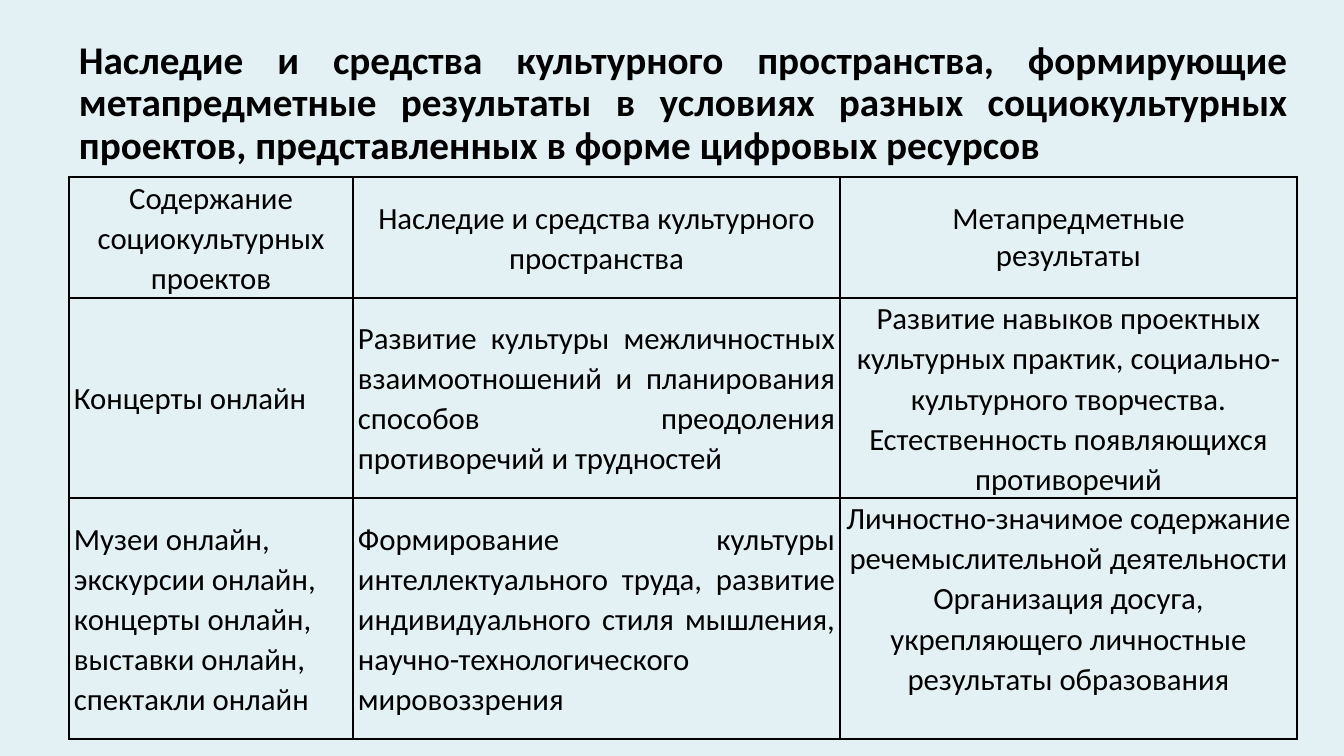
from lxml import etree
from pptx import Presentation
from pptx.dml.color import RGBColor
from pptx.enum.text import MSO_ANCHOR, PP_ALIGN
from pptx.oxml.ns import qn
from pptx.util import Pt

PX = 914400 / 100.8
BACKGROUND = RGBColor(0xE4, 0xF1, 0xF4)
BLACK = RGBColor(0x00, 0x00, 0x00)
CENTER, JUSTIFY = PP_ALIGN.CENTER, PP_ALIGN.JUSTIFY
MIDDLE, TOP = MSO_ANCHOR.MIDDLE, MSO_ANCHOR.TOP

TITLE = ("Наследие и средства культурного пространства, формирующие "
         "метапредметные результаты в условиях разных социокультурных "
         "проектов, представленных в форме цифровых ресурсов")
COL_WIDTHS = [284, 487, 457]
ROW_HEIGHTS = [121, 200, 241]
ROWS = [
    ["Содержание социокультурных проектов",
     "Наследие и средства культурного пространства",
     "Метапредметные\nрезультаты"],
    ["Концерты онлайн",
     "Развитие культуры межличностных взаимоотношений и планирования "
     "способов преодоления противоречий и трудностей",
     "Развитие навыков проектных культурных практик, "
     "социально-культурного творчества. "
     "Естественность появляющихся противоречий"],
    ["Музеи онлайн,\nэкскурсии онлайн,\nконцерты онлайн,\n"
     "выставки онлайн,\nспектакли онлайн",
     "Формирование культуры интеллектуального труда, развитие "
     "индивидуального стиля мышления, научно-технологического мировоззрения",
     "Личностно-значимое содержание речемыслительной деятельности\n"
     "Организация досуга, укрепляющего личностные результаты образования"],
]


def px(n):
    return round(n * PX)


def write(tf, text, size, bold, align, spacing):
    tf.text = text
    for p in tf.paragraphs:
        p.alignment = align
        p.line_spacing = spacing
        font = p.runs[0].font
        font.name = "Calibri"
        font.size = Pt(size)
        font.bold = bold
        font.color.rgb = BLACK


prs = Presentation()
prs.slide_width, prs.slide_height = px(1344), px(756)
slide = prs.slides.add_slide(prs.slide_layouts[6])
slide.background.fill.solid()
slide.background.fill.fore_color.rgb = BACKGROUND

title = slide.shapes.add_textbox(px(69), px(31), px(1228), px(146))
tf = title.text_frame
tf.word_wrap = True
tf.vertical_anchor = MIDDLE
write(tf, TITLE, 28, True, JUSTIFY, 0.9)

table = slide.shapes.add_table(
    len(ROWS), len(COL_WIDTHS), px(69), px(177),
    px(sum(COL_WIDTHS)), px(sum(ROW_HEIGHTS))).table
table.first_row = table.horz_banding = False
for column, width in zip(table.columns, COL_WIDTHS):
    column.width = px(width)
for row, height in zip(table.rows, ROW_HEIGHTS):
    row.height = px(height)

for i, texts in enumerate(ROWS):
    for j, text in enumerate(texts):
        cell = table.cell(i, j)
        last = i == 2 and j == 2
        cell.margin_left = cell.margin_right = px(2 if last else 5)
        cell.margin_top = cell.margin_bottom = 0
        cell.vertical_anchor = TOP if last else MIDDLE
        align = CENTER if i == 0 or j == 2 else JUSTIFY
        spacing = 1.0 if i == 0 and j == 2 else 1.07
        write(cell.text_frame, text, 22, False, align, spacing)
        tc_pr = cell._tc.get_or_add_tcPr()
        for side in ("a:lnL", "a:lnR", "a:lnT", "a:lnB"):
            ln = etree.SubElement(tc_pr, qn(side), w=str(Pt(1)))
            fill = etree.SubElement(ln, qn("a:solidFill"))
            etree.SubElement(fill, qn("a:srgbClr"), val=str(BLACK))
        cell.fill.background()

prs.save("out.pptx")
